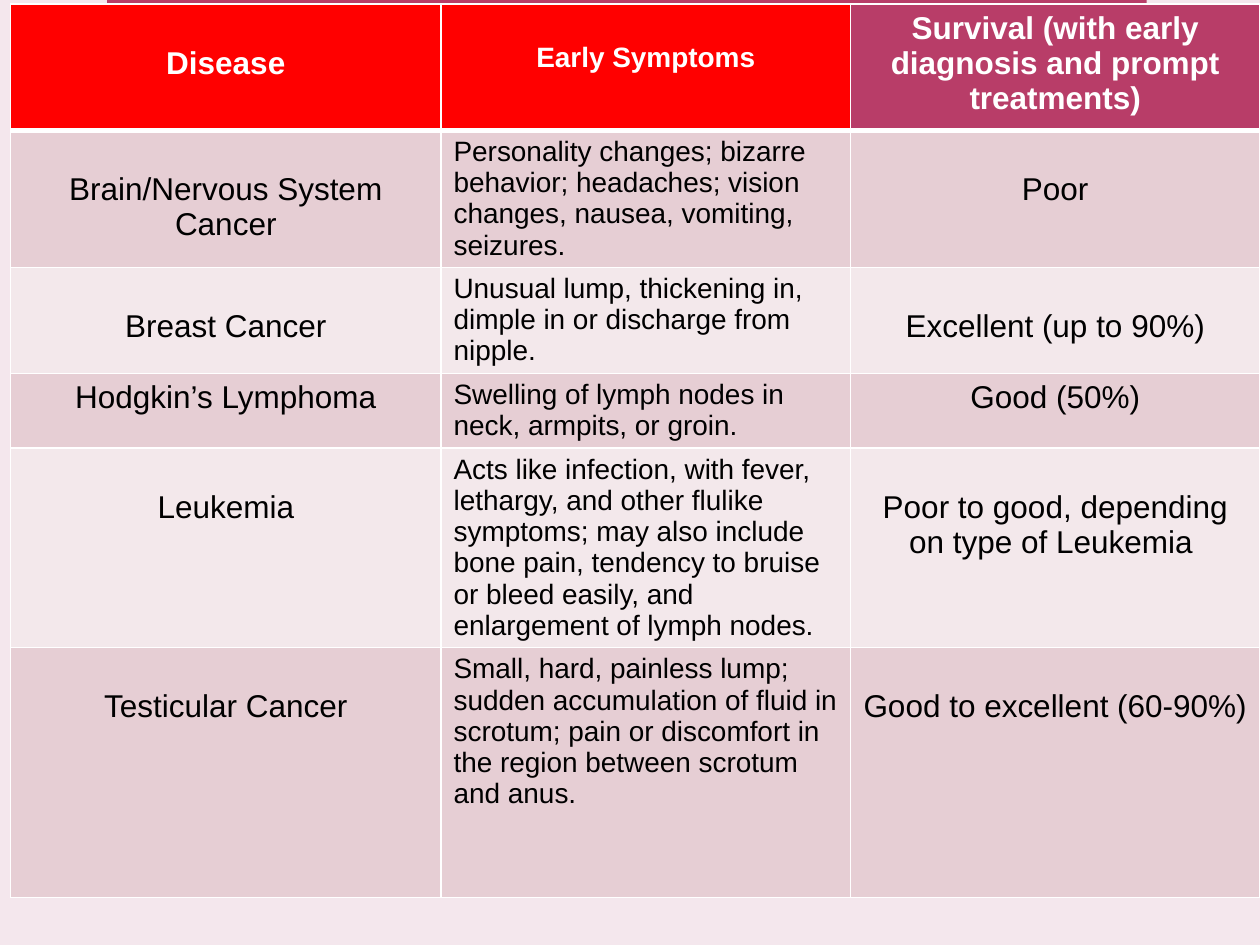
from dataclasses import dataclass

from lxml.etree import SubElement
from pptx import Presentation
from pptx.dml.color import RGBColor
from pptx.enum.shapes import MSO_SHAPE
from pptx.enum.text import PP_ALIGN
from pptx.oxml.ns import qn
from pptx.util import Pt


@dataclass(frozen=True)
class Theme:
    font: str = "Arial"
    background: str = "F4E7ED"
    accent: str = "B83D68"
    alert: str = "FF0000"
    bands: tuple = ("E6CED4", "F3E8EB")
    light: str = "FFFFFF"
    dark: str = "000000"
    large: int = 18
    small: int = 16
    border: int = 1
    header_border: int = 3


THEME = Theme()
HEADERS = ("Disease", "Early Symptoms",
           "Survival (with early diagnosis and prompt treatments)")
DISEASES = (
    ("Brain/Nervous System Cancer",
     "Personality changes; bizarre behavior; headaches; vision changes, nausea, vomiting, seizures.",
     "Poor"),
    ("Breast Cancer",
     "Unusual lump, thickening in, dimple in or discharge from nipple.",
     "Excellent (up to 90%)"),
    ("Hodgkin’s Lymphoma",
     "Swelling of lymph nodes in neck, armpits, or groin.",
     "Good (50%)"),
    ("Leukemia",
     "Acts like infection, with fever, lethargy, and other flulike symptoms; may also include "
     "bone pain, tendency to bruise or bleed easily, and enlargement of lymph nodes.",
     "Poor to good, depending on type of Leukemia "),
    ("Testicular Cancer",
     "Small, hard, painless lump; sudden accumulation of fluid in scrotum; pain or discomfort "
     "in the region between scrotum and anus.",
     "Good to excellent (60-90%)"),
)
HEADER_FILLS = (THEME.alert, THEME.alert, THEME.accent)
COLUMN_WIDTHS = (246, 234, 234)
ROW_HEIGHTS = (72, 78.3, 60.6, 42.8, 113.7, 142.9)
TABLE_LEFT, TABLE_TOP = 6, 2.4
CELL_MARGIN = 3.6
LINE_SPACING = 1.13
SYMPTOMS = 1
# Cells whose text starts at the top; the others start one line lower.
TOP_CELLS = {(0, 2), (3, 0), (3, 2)} | {(row, SYMPTOMS) for row in range(1, 6)}


def set_borders(cell, top, bottom):
    properties = cell._tc.get_or_add_tcPr()
    widths = {"L": THEME.border, "R": THEME.border, "T": top, "B": bottom}
    for side, width in widths.items():
        line = SubElement(properties, qn(f"a:ln{side}"), w=str(Pt(width)))
        fill = SubElement(line, qn("a:solidFill"))
        SubElement(fill, qn("a:srgbClr"), val=THEME.light)


def fill_cell(cell, row, column, text):
    is_header = row == 0
    size = THEME.small if column == SYMPTOMS else THEME.large
    set_borders(cell,
                top=THEME.header_border if row == 1 else THEME.border,
                bottom=THEME.header_border if is_header else THEME.border)
    color = HEADER_FILLS[column] if is_header else THEME.bands[(row - 1) % 2]
    cell.fill.solid()
    cell.fill.fore_color.rgb = RGBColor.from_string(color)
    lowered = 0 if (row, column) in TOP_CELLS else size * LINE_SPACING
    cell.margin_top = Pt(CELL_MARGIN + lowered)
    cell.text_frame.text = text
    paragraph = cell.text_frame.paragraphs[0]
    left_aligned = column == SYMPTOMS and not is_header
    paragraph.alignment = PP_ALIGN.LEFT if left_aligned else PP_ALIGN.CENTER
    font = paragraph.runs[0].font
    font.name, font.size, font.bold = THEME.font, Pt(size), is_header
    font.color.rgb = RGBColor.from_string(THEME.light if is_header else THEME.dark)


def add_top_bar(slide):
    bar = slide.shapes.add_shape(MSO_SHAPE.RECTANGLE, Pt(61.2), Pt(0), Pt(594), Pt(30.2))
    bar.shadow.inherit = False
    bar.fill.solid()
    bar.fill.fore_color.rgb = RGBColor.from_string(THEME.accent)
    bar.line.fill.background()


def add_disease_table(slide):
    rows = (HEADERS, *DISEASES)
    table = slide.shapes.add_table(
        len(rows), len(HEADERS), Pt(TABLE_LEFT), Pt(TABLE_TOP),
        Pt(sum(COLUMN_WIDTHS)), Pt(sum(ROW_HEIGHTS))).table
    for column, width in zip(table.columns, COLUMN_WIDTHS):
        column.width = Pt(width)
    for row, height in zip(table.rows, ROW_HEIGHTS):
        row.height = Pt(height)
    for row, texts in enumerate(rows):
        for column, text in enumerate(texts):
            fill_cell(table.cell(row, column), row, column, text)


def main():
    presentation = Presentation()
    presentation.slide_width, presentation.slide_height = Pt(720), Pt(540)
    slide = presentation.slides.add_slide(presentation.slide_layouts.get_by_name("Blank"))
    slide.background.fill.solid()
    slide.background.fill.fore_color.rgb = RGBColor.from_string(THEME.background)
    add_top_bar(slide)
    add_disease_table(slide)
    presentation.save("out.pptx")


if __name__ == "__main__":
    main()
